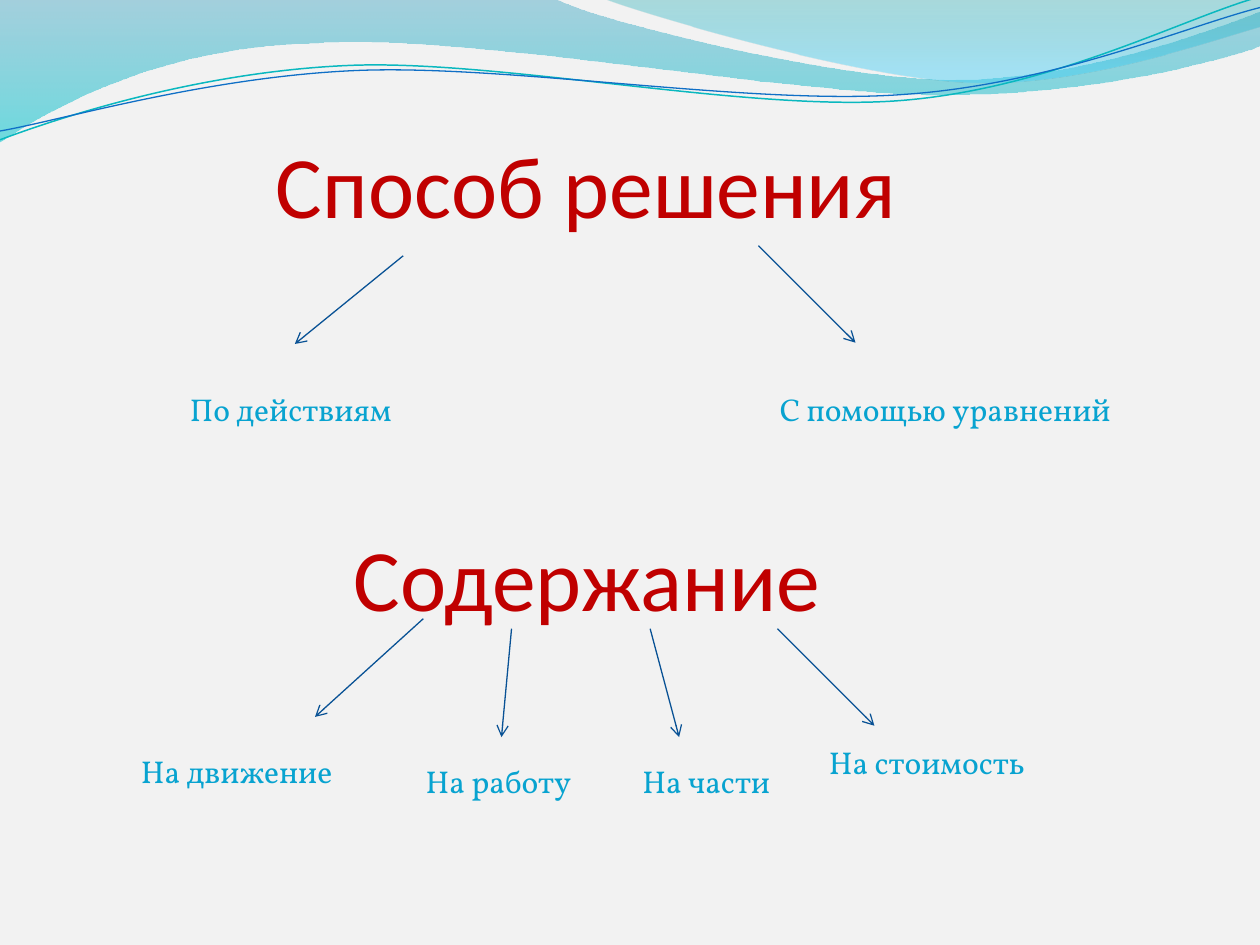
from pptx import Presentation, util as u
from pptx.dml.color import RGBColor
from pptx.enum import shapes, text
from pptx.oxml import parse_xml
from pptx.oxml.ns import nsdecls, qn
from lxml import etree

Inches = u.Inches
THEME = {
    "back": "F2F2F2", "arrow": "095295", "thin": 0.75,
    "head": {"name": "Calibri", "size": u.Pt(50), "color": "C00000"},
    "label": {"name": "Vollkorn", "size": u.Pt(18), "color": "08A3D0"},
}


def trace(sheet, start, parts, close):
    """Outline of straight parts (2 numbers) and cubic parts (6 numbers)."""
    pen = sheet.build_freeform(*map(Inches, start))
    for part in parts:
        spots = zip(part[::2], part[1::2])
        pen.add_line_segments([tuple(map(Inches, s)) for s in spots], close=False)
    if close:
        pen.add_line_segments([], close=True)
    form = pen.convert_to_shape()
    form.shadow.inherit = False
    lines = iter(list(form._element.spPr.iter(qn("a:lnTo"))))
    for part in parts:
        first = next(lines)
        if len(part) == 6:
            first.tag = qn("a:cubicBezTo")
            for _ in range(2):
                extra = next(lines)
                first.append(extra[0])
                extra.getparent().remove(extra)
    return form


def write(box, words, place, kind):
    box.left, box.top, box.width, box.height = map(Inches, place)
    frame = box.text_frame
    frame.word_wrap = True
    frame.text = words
    frame.paragraphs[0].alignment = text.PP_ALIGN.LEFT
    font = frame.paragraphs[0].runs[0].font
    for key, value in THEME[kind].items():
        if key == "color":
            font.color.rgb = RGBColor.from_string(value)
        else:
            setattr(font, key, value)
    if kind == "head":
        look = {"margin_left": 0, "margin_right": 0, "margin_bottom": 0,
                "margin_top": Inches(0.05), "auto_size": text.MSO_AUTO_SIZE.NONE,
                "vertical_anchor": text.MSO_ANCHOR.BOTTOM}
    else:
        look = {"auto_size": text.MSO_AUTO_SIZE.SHAPE_TO_FIT_TEXT}
    for key, value in look.items():
        setattr(frame, key, value)


deck = Presentation()
deck.slide_width, deck.slide_height = Inches(10), Inches(7.5)
slide = deck.slides.add_slide(deck.slide_layouts[5])
slide.background.fill.solid()
slide.background.fill.fore_color.rgb = RGBColor.from_string(THEME["back"])
sheet = slide.shapes

# Waves along the top: start, parts, gradient stops of position, colour, opacity
waves = [
    ((0, 0), [(4.4, -0.01), (4.76, 0.17, 6.64, 0.63, 7.58, 0.63),
              (8.53, 0.63, 9.58, 0.26, 10, 0.09), (10.01, 0.36),
              (9.83, 0.44, 8.7, 0.76, 7.46, 0.75),
              (6.22, 0.75, 3.82, 0.28, 2.57, 0.34),
              (1.29, 0.36, 0.46, 0.83, -0.01, 1.13), (0, 0)],
     [(0, "44A7C4", 45), (1, "00C6CF", 55)]),
    ((4.79, -0.01), [(5.09, 0.11, 6.82, 0.62, 7.69, 0.65),
                     (8.56, 0.69, 9.61, 0.32, 10, 0.21), (10, 0), (4.79, -0.01)],
     [(0, "00A1A9", 30), (0.8, "44CEF6", 45)]),
]
for start, parts, stops in waves:
    wave = trace(sheet, start, parts, True)
    wave.line.fill.background()
    wave.fill.gradient()
    wave.fill.gradient_angle = 270
    for stop, (spot, color, _) in zip(wave.fill.gradient_stops, stops):
        stop.position = spot
        stop.color.rgb = RGBColor.from_string(color)
    tints = list(wave._element.spPr.iter(qn("a:srgbClr")))
    for tint, (_, _, alpha) in zip(tints, stops):
        etree.SubElement(tint, qn("a:alpha"), val=str(alpha * 1000))

curves = [
    ((0, 1.11), [(0.48, 0.93, 1.58, 0.57, 2.77, 0.52),
                 (3.95, 0.47, 5.93, 0.89, 7.13, 0.8),
                 (8.33, 0.71, 9.38, 0.15, 9.98, -0.02)], "0AB8BF", 0.85),
    ((0, 1.04), [(0.47, 0.96, 1.64, 0.61, 2.83, 0.56),
                 (4.03, 0.51, 5.97, 0.84, 7.17, 0.75),
                 (8.36, 0.67, 9.41, 0.21, 10, 0.06)], "0F6FC6", 0.75),
]
for start, parts, color, width in curves:
    curve = trace(sheet, start, parts, False)
    curve.fill.background()
    curve.line.color.rgb = RGBColor.from_string(color)
    curve.line.width = u.Pt(width)

# Each group: heading, its place, arrows, labels with their places
groups = [
    ("Способ решения", (2.19, 0.62, 5.2, 1.25),
     [(3.2, 2.03, 2.34, 2.73), (6.02, 1.95, 6.79, 2.72)],
     [("По действиям", (1.41, 3.05, 2.5, 0.4)),
      ("С помощью уравнений", (6.09, 3.05, 3.05, 0.4))]),
    ("Содержание", (2.81, 3.74, 5.2, 1.25),
     [(3.36, 4.91, 2.5, 5.69), (6.17, 4.99, 6.94, 5.76),
      (4.06, 4.99, 3.98, 5.85), (5.16, 4.99, 5.39, 5.85)],
     [("На движение", (1.02, 5.92, 2.5, 0.4)),
      ("На работу", (3.28, 6, 2.5, 0.4)),
      ("На части", (5, 6, 2.5, 0.4)),
      ("На стоимость", (6.48, 5.85, 2.5, 0.4))]),
]
title = sheet.title
sheet._spTree.append(title._element)  # in front of the waves
for head, spot, arrows, labels in groups:
    box = title if head == groups[0][0] else sheet.add_textbox(*map(Inches, spot))
    write(box, head, spot, "head")
    for ends in arrows:
        arrow = sheet.add_connector(shapes.MSO_CONNECTOR.STRAIGHT, *map(Inches, ends))
        arrow.line.color.rgb = RGBColor.from_string(THEME["arrow"])
        arrow.line.width = u.Pt(THEME["thin"])
        etree.SubElement(arrow.line._get_or_add_ln(), qn("a:tailEnd"), type="arrow")
        arrow._element.spPr.append(parse_xml(f"<a:effectLst {nsdecls('a')}/>"))
    for words, place in labels:
        write(sheet.add_textbox(*map(Inches, place)), words, place, "label")

deck.save("out.pptx")
